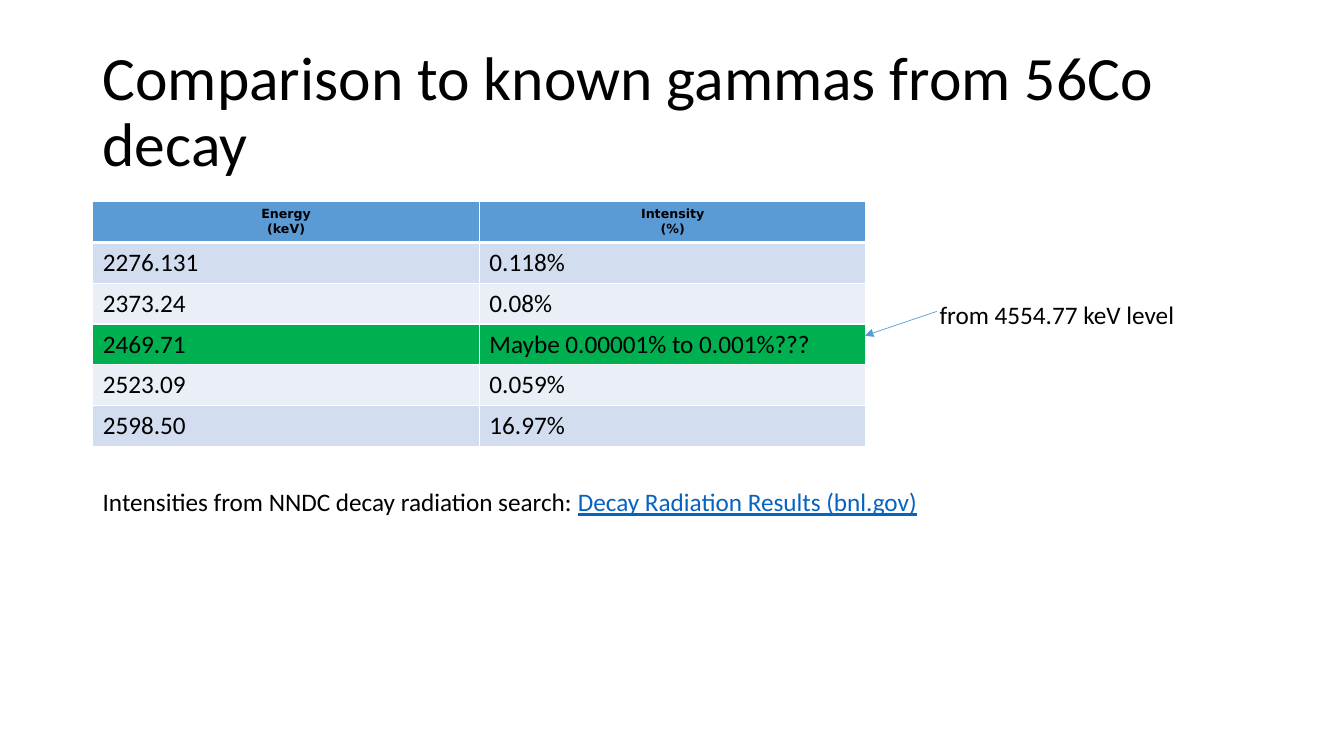
from copy import deepcopy
from dataclasses import dataclass

from lxml import etree
from pptx import Presentation
from pptx import util as u
from pptx.dml.color import RGBColor
from pptx.enum import shapes, text
from pptx.oxml import ns


@dataclass(frozen=True)
class Theme:
    body_font: str = "Calibri"
    header_font: str = "DejaVu Sans"
    title_size: float = 44
    body_size: float = 18
    header_size: float = 9
    ink: str = "000000"
    link: str = "0563C1"
    accent: str = "5B9BD5"
    band_dark: str = "D2DEEF"
    band_light: str = "EAEFF7"
    highlight: str = "00B050"
    border: str = "FFFFFF"


def write(paragraph, wording, *, font, size, color, bold=False, underline=False):
    """Add formatted text to a paragraph; a newline becomes a line break."""
    for index, line in enumerate(wording.split("\n")):
        if index:
            paragraph.add_line_break()
        run = paragraph.add_run()
        run.text = line
        run.font.name = font
        run.font.size = u.Pt(size)
        run.font.bold = bold
        run.font.underline = underline
        run.font.color.rgb = RGBColor.from_string(color)
    # Line breaks take the size of the text around them
    for line_break in paragraph._p.findall(ns.qn("a:br")):
        if len(line_break) == 0:
            line_break.append(deepcopy(run._r.rPr))


class SlideBuilder:
    def __init__(self, slide, theme):
        self.slide = slide
        self.theme = theme

    def text_box(self, left, top, width, height, *parts, size=None, wrap=False,
                 anchor=text.MSO_ANCHOR.TOP, line_spacing=None):
        """Each part is a pair of wording and format changes."""
        box = self.slide.shapes.add_textbox(*map(u.Inches, (left, top, width, height)))
        frame = box.text_frame
        frame.word_wrap = wrap
        frame.vertical_anchor = anchor
        paragraph = frame.paragraphs[0]
        paragraph.line_spacing = line_spacing
        for wording, changes in parts:
            style = dict(font=self.theme.body_font, size=size or self.theme.body_size,
                         color=self.theme.ink)
            write(paragraph, wording, **(style | changes))

    def arrow(self, start, end, width):
        line = self.slide.shapes.add_connector(
            shapes.MSO_CONNECTOR.STRAIGHT, *map(u.Inches, (*start, *end)))
        line.line.color.rgb = RGBColor.from_string(self.theme.accent)
        line.line.width = u.Pt(width)
        outline = line.line._get_or_add_ln()
        etree.SubElement(outline, ns.qn("a:tailEnd"), type="triangle")
        etree.SubElement(line._element.spPr, ns.qn("a:effectLst"))

    def borders(self, cell, **widths):
        """Draw the four sides of a cell, one point wide unless given."""
        properties = cell._tc.get_or_add_tcPr()
        for index, side in enumerate("LRTB"):
            line = etree.Element(ns.qn(f"a:ln{side}"), w=str(u.Pt(widths.get(side, 1))))
            fill = etree.SubElement(line, ns.qn("a:solidFill"))
            etree.SubElement(fill, ns.qn("a:srgbClr"), val=self.theme.border)
            properties.insert(index, line)

    def table(self, left, top, width, height, header, records, highlighted):
        theme = self.theme
        rows = [header, *records]
        table = self.slide.shapes.add_table(
            len(rows), len(header), *map(u.Inches, (left, top, width, height))).table
        for r, values in enumerate(rows):
            for c, value in enumerate(values):
                cell = table.cell(r, c)
                paragraph = cell.text_frame.paragraphs[0]
                if r == 0:
                    color = theme.accent
                    cell.vertical_anchor = text.MSO_ANCHOR.MIDDLE
                    cell.margin_left = cell.margin_right = u.Inches(0.02)
                    cell.margin_top = cell.margin_bottom = u.Inches(0.02)
                    paragraph.alignment = text.PP_ALIGN.CENTER
                    write(paragraph, value, font=theme.header_font,
                          size=theme.header_size, color=theme.ink, bold=True)
                    widths = {"B": 3}
                else:
                    color = theme.band_dark if r % 2 else theme.band_light
                    if r == highlighted:
                        color = theme.highlight
                    write(paragraph, value, font=theme.body_font,
                          size=theme.body_size, color=theme.ink)
                    widths = {"T": 3} if r == 1 else {}
                cell.fill.solid()
                cell.fill.fore_color.rgb = RGBColor.from_string(color)
                self.borders(cell, **widths)


GAMMAS = [
    ("2276.131", "0.118%"),
    ("2373.24", "0.08%"),
    ("2469.71", "Maybe 0.00001% to 0.001%???"),
    ("2523.09", "0.059%"),
    ("2598.50", "16.97%"),
]


def main():
    deck = Presentation()
    deck.slide_width, deck.slide_height = u.Inches(13.33), u.Inches(7.5)
    theme = Theme()
    page = SlideBuilder(deck.slides.add_slide(deck.slide_layouts[6]), theme)
    margin = 0.92

    # Title
    page.text_box(margin, 0.4, 11.5, 1.45,
                  ("Comparison to known gammas from 56Co decay", {}),
                  size=theme.title_size, wrap=True,
                  anchor=text.MSO_ANCHOR.MIDDLE, line_spacing=0.9)

    # Gamma energies and intensities
    page.table(margin, 2, 7.67, 2.43, ("Energy\n(keV)", "Intensity\n(%)"),
               GAMMAS, highlighted=3)

    # Note on the highlighted gamma
    page.arrow((9.29, 3.09), (8.58, 3.33), 0.5)
    page.text_box(9.22, 2.92, 2.59, 0.4, ("from 4554.77 keV level", {}))

    # Source of the intensities
    page.text_box(margin, 4.78, 8.38, 0.4,
                  ("Intensities from NNDC decay radiation search: ", {}),
                  ("Decay Radiation Results (bnl.gov)",
                   {"color": theme.link, "underline": True}))

    deck.save("out.pptx")


if __name__ == "__main__":
    main()
